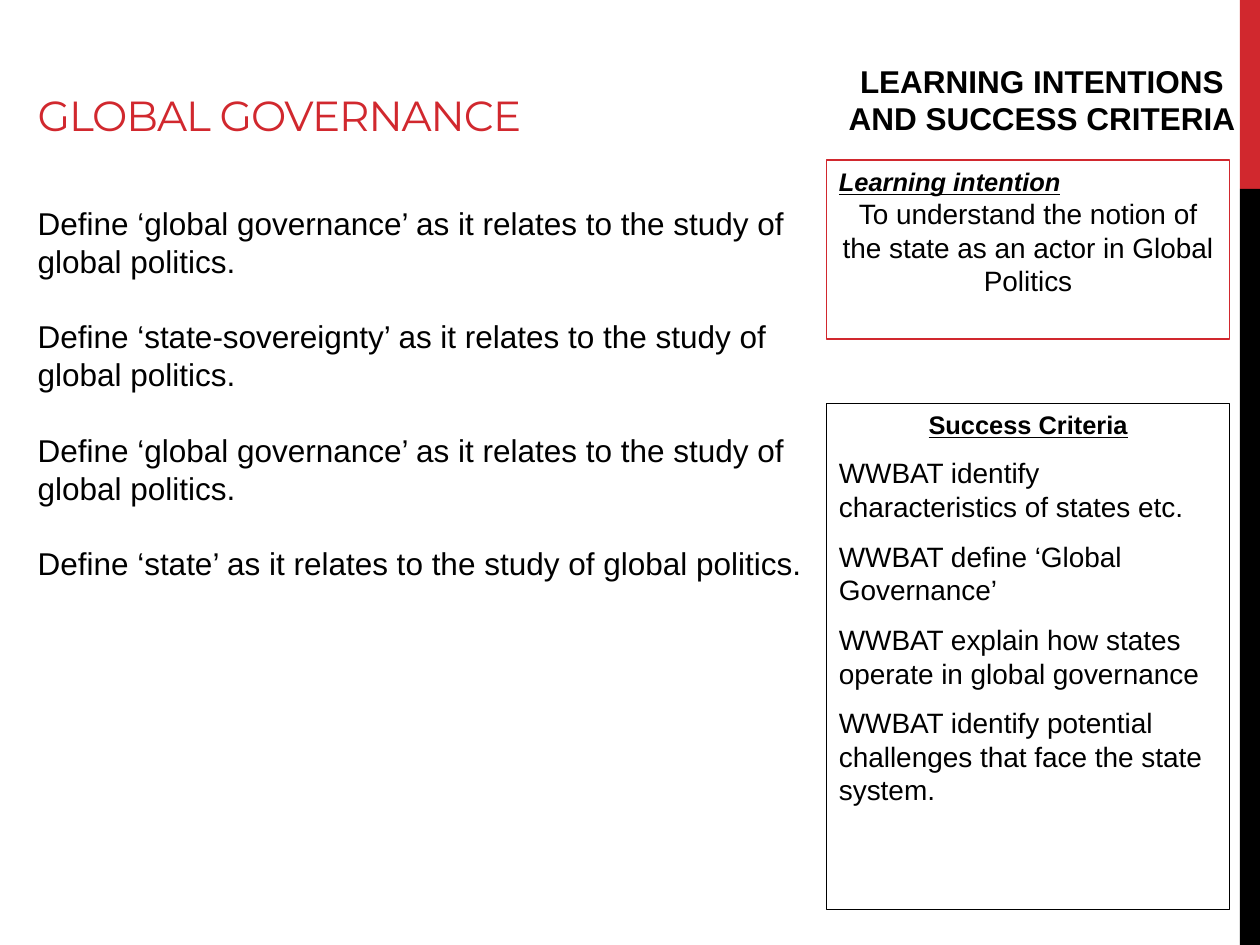
"""Build the Global Governance slide with its learning intentions and success criteria."""
from pptx import Presentation
from pptx.dml.color import RGBColor
from pptx.enum.shapes import MSO_SHAPE
from pptx.enum.text import MSO_ANCHOR, PP_ALIGN
from pptx.util import Inches, Pt

RECTANGLE = MSO_SHAPE.RECTANGLE
TOP, BOTTOM = MSO_ANCHOR.TOP, MSO_ANCHOR.BOTTOM
LEFT, CENTER = PP_ALIGN.LEFT, PP_ALIGN.CENTER
RED, BLACK = "D1282E", "000000"


def color(value):
    return RGBColor.from_string(value)


def write(shape, texts, size, align=LEFT, bold=False, font="Arial", ink=BLACK, before=0, after=0):
    frame = shape.text_frame
    frame.word_wrap = True
    frame.vertical_anchor = TOP
    frame.text = "\n".join(texts)
    for paragraph in frame.paragraphs:
        paragraph.alignment = align
        paragraph.space_before = Pt(before)
        paragraph.space_after = Pt(after)
        paragraph.font.name = font
        paragraph.font.size = Pt(size)
        paragraph.font.bold = bold
        paragraph.font.color.rgb = color(ink)
    return frame


prs = Presentation()
prs.slide_width, prs.slide_height = Inches(10), Inches(7.5)
slide = prs.slides.add_slide(prs.slide_layouts[6])
shapes = slide.shapes

for top, height, fill in [(0, 1.5, RED), (1.5, 6, BLACK)]:
    band = shapes.add_shape(RECTANGLE, Inches(9.84), Inches(top), Inches(0.16), Inches(height))
    band.shadow.inherit = False
    band.fill.solid()
    band.fill.fore_color.rgb = color(fill)
    band.line.fill.background()

intention = ["Learning intention",
             "To understand the notion of the state as an actor in Global Politics"]
criteria = ["Success Criteria",
            "WWBAT identify characteristics of states etc.",
            "WWBAT define ‘Global Governance’",
            "WWBAT explain how states operate in global governance",
            "WWBAT identify potential challenges that face the state system."]
panels = [(1.27, 1.42, RED, intention, LEFT, CENTER, 0, 0),
          (3.2, 4.02, BLACK, criteria, CENTER, LEFT, 3.2, 6)]
for top, height, border, texts, heading_align, body_align, before, after in panels:
    panel = shapes.add_shape(RECTANGLE, Inches(6.56), Inches(top), Inches(3.2), Inches(height))
    panel.shadow.inherit = False
    panel.fill.background()
    panel.line.color.rgb = color(border)
    panel.line.width = Pt(0.75)
    heading = write(panel, texts, 16, body_align, before=before, after=after).paragraphs[0]
    heading.alignment = heading_align
    heading.space_before = Pt(0)
    heading.font.size = Pt(14.5)
    heading.font.bold = True
    heading.font.underline = True
    heading.font.italic = texts is intention

sidebar_heading = shapes.add_textbox(Inches(6.56), Inches(0.44), Inches(3.42), Inches(0.71))
write(sidebar_heading, ["LEARNING INTENTIONS AND SUCCESS CRITERIA"], 18, CENTER, bold=True)

title = shapes.add_textbox(Inches(0.2), Inches(-0.34), Inches(5.51), Inches(1.5))
title_frame = write(title, ["GLOBAL GOVERNANCE"], 24, font="Montserrat", ink=RED)
title_frame.vertical_anchor = BOTTOM
title_frame.paragraphs[0].runs[0].font._element.set("spc", "-60")

terms = ["global governance", "state-sovereignty", "global governance", "state"]
questions = shapes.add_textbox(Inches(0.2), Inches(1.57), Inches(6.36), Inches(3.13))
write(questions, [f"Define ‘{term}’ as it relates to the study of global politics." for term in terms],
      18, after=21.6)

prs.save("out.pptx")
